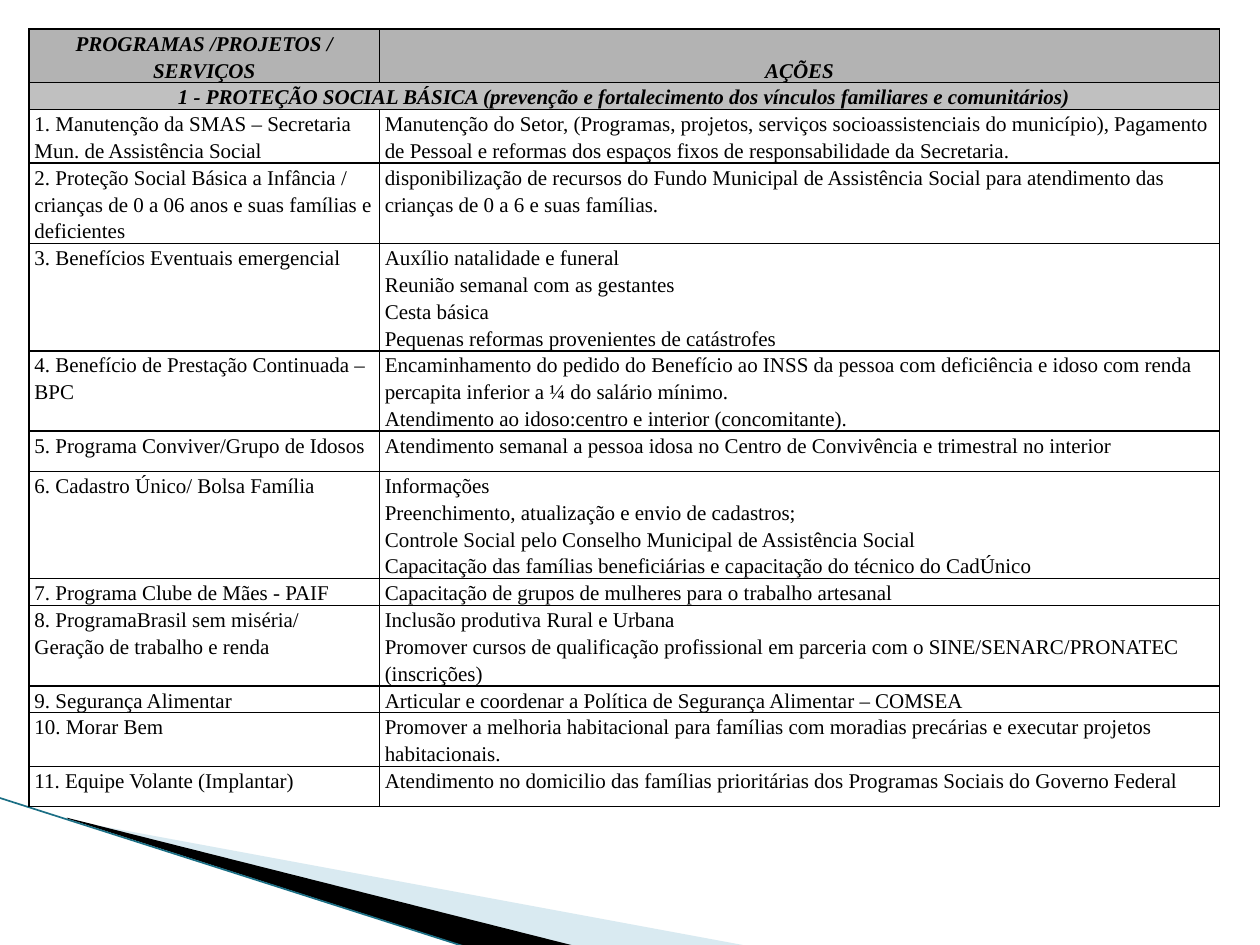
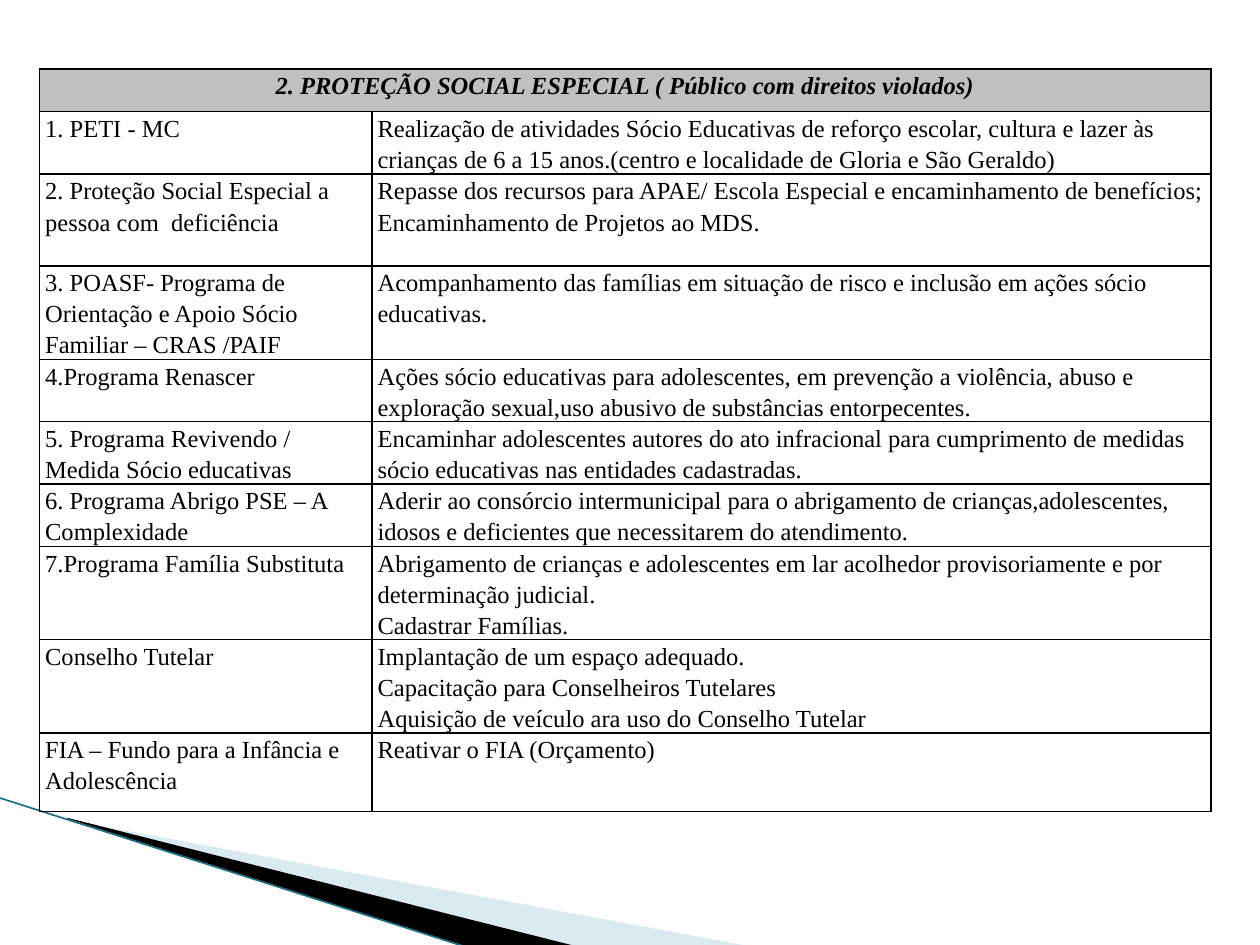
from pptx import Presentation
from pptx.dml.color import RGBColor
from pptx.enum.text import MSO_ANCHOR as Anchor, PP_ALIGN as Align
from pptx.oxml import parse_xml
from pptx.oxml.ns import nsdecls, qn
from pptx.util import Pt
from lxml.etree import SubElement

FONT = "Times New Roman"
BLACK, HEADER_GREY, SECTION_GREY = "000000", "B3B3B3", "C0C0C0"
PALE_BLUE, TEAL = "A0CBDC", "1B6F85"

# Decoration shared by the pages: outlines in points, colour, opacity in percent
WEDGES = [
    ([(39.6, 468.7), (428.4, 540.7), (328.3, 540.7), (39.6, 468)], PALE_BLUE, 40),
    ([(38.2, 467.3), (329, 540.7), (267.8, 541.4), (38.9, 468)], BLACK, 100),
]
EDGE = (-0.7, 455.8, 267.1, 541.4)

# Each row: minimum height, then cell texts; a tuple holds several paragraphs,
# and a row with a single text is a section heading across both columns
BASIC_PROTECTION = {
    "at": (16.6, 16.6), "height": 474.5, "columns": (200.2, 480.2),
    "size": 12, "margin": 3.1, "header": True,
    "rows": [
        (23, "PROGRAMAS /PROJETOS / SERVIÇOS", "AÇÕES"),
        (11.5, "1 - PROTEÇÃO SOCIAL BÁSICA (prevenção e fortalecimento dos vínculos "
               "familiares e comunitários)"),
        (23, "1. Manutenção da SMAS – Secretaria Mun. de Assistência Social",
         "Manutenção do Setor, (Programas, projetos, serviços socioassistenciais do "
         "município), Pagamento de Pessoal e reformas dos espaços fixos de "
         "responsabilidade da Secretaria."),
        (34.5, "2. Proteção Social Básica a Infância / crianças de 0 a 06 anos e suas "
               "famílias e deficientes",
         "disponibilização de recursos do Fundo Municipal de Assistência Social para "
         "atendimento das crianças de 0 a 6 e suas famílias."),
        (46, "3. Benefícios Eventuais emergencial",
         ("Auxílio natalidade e funeral",
          "Reunião semanal com as gestantes",
          "Cesta básica",
          "Pequenas reformas provenientes de catástrofes")),
        (34.5, "4. Benefício de Prestação Continuada – BPC",
         ("Encaminhamento do pedido do Benefício ao INSS da pessoa com deficiência e "
          "idoso com renda percapita inferior a ¼ do salário mínimo.",
          "Atendimento ao idoso:centro e interior (concomitante).")),
        (23, "5. Programa Conviver/Grupo de Idosos",
         "Atendimento semanal a pessoa idosa no Centro de Convivência e trimestral no "
         "interior"),
        (46, "6. Cadastro Único/ Bolsa Família",
         ("Informações",
          "Preenchimento, atualização e envio de cadastros;",
          "Controle Social pelo Conselho Municipal de Assistência Social",
          "Capacitação das famílias beneficiárias e capacitação do técnico do CadÚnico")),
        (11.5, "7. Programa Clube de Mães - PAIF",
         "Capacitação de grupos de mulheres para o trabalho artesanal"),
        (34.5, "8. ProgramaBrasil sem miséria/ Geração de trabalho e renda",
         ("Inclusão produtiva Rural e Urbana",
          "Promover cursos de qualificação profissional em parceria com o "
          "SINE/SENARC/PRONATEC (inscrições)")),
        (11.5, "9. Segurança Alimentar",
         "Articular e coordenar a Política de Segurança Alimentar – COMSEA"),
        (23, "10. Morar Bem",
         "Promover a melhoria habitacional para famílias com moradias precárias e "
         "executar projetos habitacionais."),
        (23, "11. Equipe Volante (Implantar)",
         "Atendimento no domicilio das famílias prioritárias dos Programas Sociais do "
         "Governo Federal"),
    ],
}

SPECIAL_PROTECTION = {
    "at": (22.5, 39.5), "height": 454.3, "columns": (190, 479.5),
    "size": 14, "margin": 3.3, "header": False,
    "rows": [
        (24.3, "2. PROTEÇÃO SOCIAL ESPECIAL ( Público com direitos violados)"),
        (35.7, "1. PETI - MC",
         "Realização de atividades Sócio Educativas de reforço escolar, cultura e lazer "
         "às crianças de 6 a 15 anos.(centro e localidade de Gloria e São Geraldo)"),
        (52.5, "2. Proteção Social Especial a pessoa com  deficiência",
         ("Repasse dos recursos para APAE/ Escola Especial e encaminhamento de "
          "benefícios;",
          "Encaminhamento de Projetos ao MDS.")),
        (52.5, "3. POASF- Programa de Orientação e Apoio Sócio Familiar – CRAS /PAIF",
         "Acompanhamento das famílias em situação de risco e inclusão em ações sócio "
         "educativas."),
        (35, "4.Programa Renascer",
         "Ações sócio educativas para adolescentes, em prevenção a violência, abuso e "
         "exploração sexual,uso abusivo de substâncias entorpecentes."),
        (35, "5. Programa Revivendo / Medida Sócio educativas",
         "Encaminhar adolescentes autores do ato infracional para cumprimento de medidas "
         "sócio educativas nas entidades cadastradas."),
        (35.7, "6. Programa Abrigo PSE – A Complexidade",
         "Aderir ao consórcio intermunicipal para o abrigamento de "
         "crianças,adolescentes, idosos e deficientes que necessitarem do atendimento."),
        (52.5, "7.Programa Família Substituta",
         ("Abrigamento de crianças e adolescentes em lar acolhedor provisoriamente e por "
          "determinação judicial.",
          "Cadastrar Famílias.")),
        (38, "Conselho Tutelar",
         ("Implantação de um espaço adequado.",
          "Capacitação para Conselheiros Tutelares",
          "Aquisição de veículo ara uso do Conselho Tutelar")),
        (45, "FIA – Fundo para a Infância e Adolescência",
         "Reativar o FIA (Orçamento)"),
    ],
}


def color(value):
    return RGBColor.from_string(value)


def add_decoration(page):
    for points, fill, opacity in WEDGES:
        corners = [(Pt(x), Pt(y)) for x, y in points]
        builder = page.shapes.build_freeform(*corners[0], scale=1.0)
        builder.add_line_segments(corners[1:], close=True)
        wedge = builder.convert_to_shape()
        wedge.shadow.inherit = False
        wedge.line.fill.background()
        wedge.fill.solid()
        wedge.fill.fore_color.rgb = color(fill)
        if opacity < 100:
            tint = wedge.fill._xPr.find(".//" + qn("a:srgbClr"))
            SubElement(tint, qn("a:alpha"), val=str(opacity * 1000))
    edge = page.shapes.add_connector(1, *(Pt(v) for v in EDGE))
    edge.line.color.rgb = color(TEAL)
    edge.line.width = Pt(0.95)
    SubElement(edge._element.spPr, qn("a:effectLst"))


def add_borders(cell):
    properties = cell._tc.get_or_add_tcPr()
    for side in ("lnL", "lnR", "lnT", "lnB"):
        properties.append(parse_xml(
            f'<a:{side} {nsdecls("a")} w="{Pt(1)}"><a:solidFill>'
            f'<a:srgbClr val="{BLACK}"/></a:solidFill></a:{side}>'))


def fill_cell(cell, text, table, background):
    """Write a cell; one with a background colour is a heading."""
    heading = background is not None
    add_borders(cell)
    cell.margin_left = cell.margin_right = Pt(table["margin"])
    cell.margin_top = cell.margin_bottom = 0
    if heading:
        cell.fill.solid()
        cell.fill.fore_color.rgb = color(background)
    else:
        cell.fill.background()
    cell.text = text if isinstance(text, str) else "\n".join(text)
    for para in cell.text_frame.paragraphs:
        para.line_spacing = 1.15
        para.alignment = Align.CENTER if heading else Align.LEFT
        font = para.font
        font.name, font.size = FONT, Pt(table["size"])
        font.bold = font.italic = heading
        font.color.rgb = color(BLACK)


def add_program_table(page, table):
    rows, columns = table["rows"], table["columns"]
    left, top = table["at"]
    frame = page.shapes.add_table(len(rows), len(columns), Pt(left), Pt(top),
                                  Pt(sum(columns)), Pt(table["height"]))
    grid = frame.table
    grid.first_row = grid.horz_banding = False
    for column, width in zip(grid.columns, columns):
        column.width = Pt(width)

    for index, (height, *texts) in enumerate(rows):
        grid.rows[index].height = Pt(height)
        is_header = table["header"] and index == 0
        is_section = len(texts) == 1
        background = HEADER_GREY if is_header else SECTION_GREY if is_section else None
        if is_section:
            grid.cell(index, 0).merge(grid.cell(index, 1))
            add_borders(grid.cell(index, 1))
        for position, text in enumerate(texts):
            fill_cell(grid.cell(index, position), text, table, background)
    if table["header"]:
        grid.cell(0, 1).vertical_anchor = Anchor.BOTTOM
    frame.height = Pt(table["height"])


def main():
    deck = Presentation()
    deck.slide_width, deck.slide_height = Pt(720), Pt(540)
    for table in (BASIC_PROTECTION, SPECIAL_PROTECTION):
        page = deck.slides.add_slide(deck.slide_layouts[6])
        add_decoration(page)
        add_program_table(page, table)
    deck.save("out.pptx")


if __name__ == "__main__":
    main()
